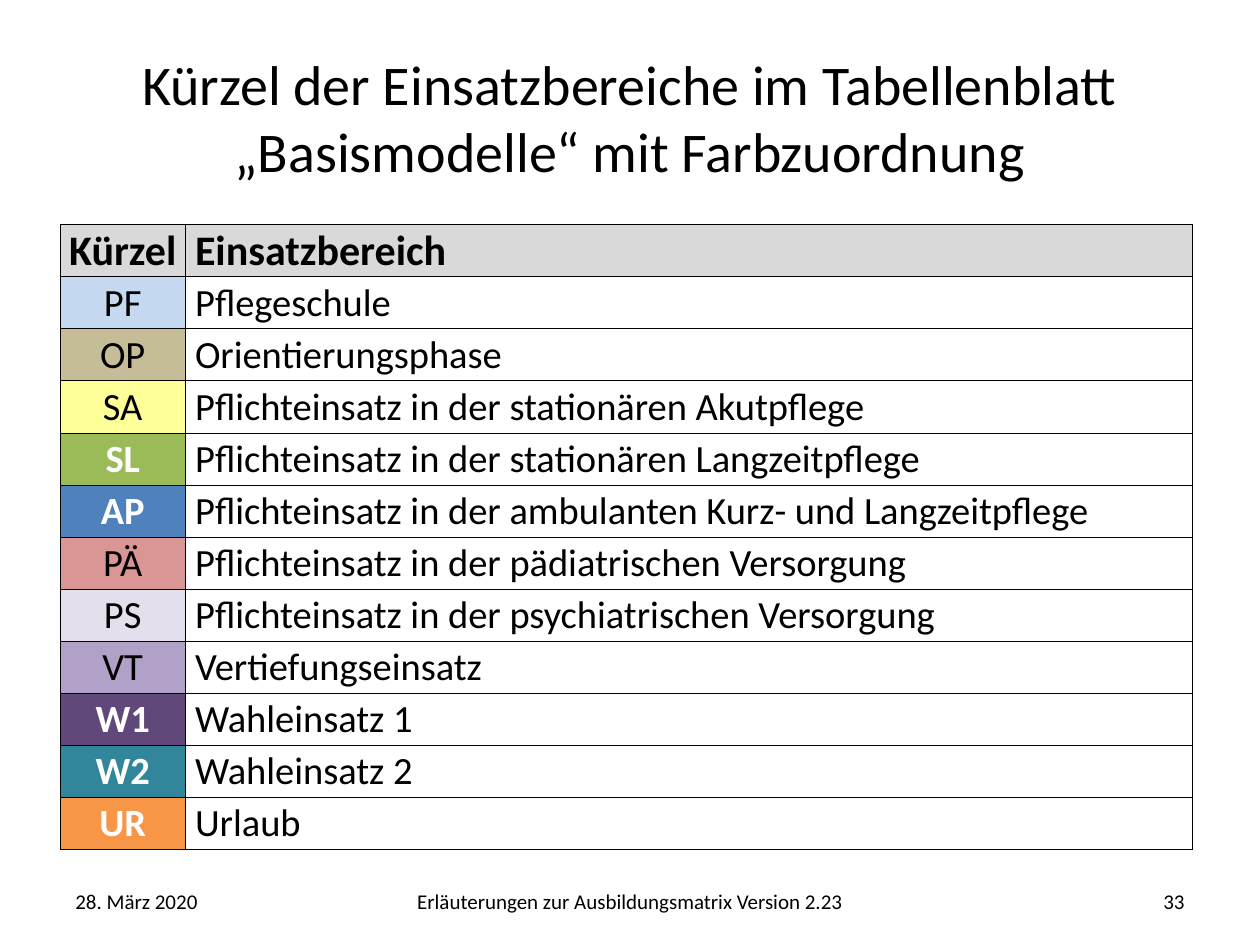
from lxml import etree
from pptx import Presentation
from pptx.dml.color import RGBColor
from pptx.enum.text import MSO_ANCHOR, PP_ALIGN
from pptx.oxml.ns import qn
from pptx.util import Inches, Pt

LEFT, CENTER, RIGHT = PP_ALIGN.LEFT, PP_ALIGN.CENTER, PP_ALIGN.RIGHT
MIDDLE = MSO_ANCHOR.MIDDLE
FONT = "Calibri"
TITLE_ONLY = 5
COLORS = {
    "black": "000000", "white": "FFFFFF", "header": "D9D9D9",
    "PF": "C5D9F1", "OP": "C4BD97", "SA": "FFFF99", "SL": "9BBB59",
    "AP": "4F81BD", "PÄ": "DA9694", "PS": "E4DFEC", "VT": "B1A0C7",
    "W1": "60497A", "W2": "31869B", "UR": "F79646",
}
AREAS = [
    ("PF", "Pflegeschule"),
    ("OP", "Orientierungsphase"),
    ("SA", "Pflichteinsatz in der stationären Akutpflege"),
    ("SL", "Pflichteinsatz in der stationären Langzeitpflege"),
    ("AP", "Pflichteinsatz in der ambulanten Kurz- und Langzeitpflege"),
    ("PÄ", "Pflichteinsatz in der pädiatrischen Versorgung"),
    ("PS", "Pflichteinsatz in der psychiatrischen Versorgung"),
    ("VT", "Vertiefungseinsatz"),
    ("W1", "Wahleinsatz 1"),
    ("W2", "Wahleinsatz 2"),
    ("UR", "Urlaub"),
]
WHITE_TEXT = {"SL", "AP", "W1", "W2", "UR"}


def rgb(name):
    return RGBColor.from_string(COLORS[name])


def write(tf, text, size=12, color="black", bold=False, align=LEFT):
    tf.word_wrap = True
    p = tf.paragraphs[0]
    p.alignment = align
    r = p.add_run()
    r.text = text
    r.font.name, r.font.size, r.font.bold = FONT, Pt(size), bold
    r.font.color.rgb = rgb(color)


def add_borders(cell, width=0.5):
    tcPr = cell._tc.get_or_add_tcPr()
    for side in ("a:lnL", "a:lnR", "a:lnT", "a:lnB"):
        ln = etree.SubElement(tcPr, qn(side), w=str(Pt(width)))
        fill = etree.SubElement(ln, qn("a:solidFill"))
        etree.SubElement(fill, qn("a:srgbClr"), val=COLORS["black"])


def format_cell(cell, text, fill, inset=0.01, **fmt):
    add_borders(cell)
    cell.fill.solid()
    cell.fill.fore_color.rgb = rgb(fill)
    cell.vertical_anchor = MIDDLE
    cell.margin_left = Inches(inset)
    cell.margin_right = cell.margin_top = Inches(0.01)
    cell.margin_bottom = 0
    write(cell.text_frame, text, **fmt)


def place_title(s, text, x, y, w, h):
    title = s.shapes.title
    title.left, title.top, title.width, title.height = map(Inches, (x, y, w, h))
    title.text_frame.vertical_anchor = MIDDLE
    write(title.text_frame, text, size=32, align=CENTER)


def add_area_table(s, x, y, w, h, code_share=0.11, indent=0.08):
    rows = len(AREAS) + 1
    table = s.shapes.add_table(rows, 2, *map(Inches, (x, y, w, h))).table
    table.columns[0].width = Inches(w * code_share)
    table.columns[1].width = Inches(w * (1 - code_share))
    for row in table.rows:
        row.height = Inches(h / rows)

    # Header row
    header = dict(size=24, bold=True)
    format_cell(table.cell(0, 0), "Kürzel", "header", align=CENTER, **header)
    format_cell(table.cell(0, 1), "Einsatzbereich", "header", indent, **header)

    # One row per area, its code on the area's colour
    for i, (code, name) in enumerate(AREAS, 1):
        strong = code in WHITE_TEXT
        format_cell(table.cell(i, 0), code, code, size=22, bold=strong,
                    color="white" if strong else "black", align=CENTER)
        format_cell(table.cell(i, 1), name, "white", indent, size=22)


def add_footer(s, x, y, w, h):
    side, middle = w * 0.26, w * 0.54
    parts = [
        ("28. März 2020", x, side, LEFT),
        ("Erläuterungen zur Ausbildungsmatrix Version 2.23",
         x + (w - middle) / 2, middle, CENTER),
        ("33", x + w - side, side, RIGHT),
    ]
    for text, left, width, align in parts:
        sp = s.shapes.add_textbox(*map(Inches, (left, y, width, h)))
        sp.text_frame.vertical_anchor = MIDDLE
        write(sp.text_frame, text, align=align)


def main():
    prs = Presentation()
    prs.slide_width, prs.slide_height = Inches(10), Inches(7.5)
    s = prs.slides.add_slide(prs.slide_layouts[TITLE_ONLY])
    place_title(s, "Kürzel der Einsatzbereiche im Tabellenblatt "
                   "„Basismodelle“ mit Farbzuordnung", 0.5, 0.3, 9, 1.25)
    add_area_table(s, 0.48, 1.78, 8.98, 4.96)
    add_footer(s, 0.5, 6.95, 9, 0.4)
    prs.save("out.pptx")


if __name__ == "__main__":
    main()
